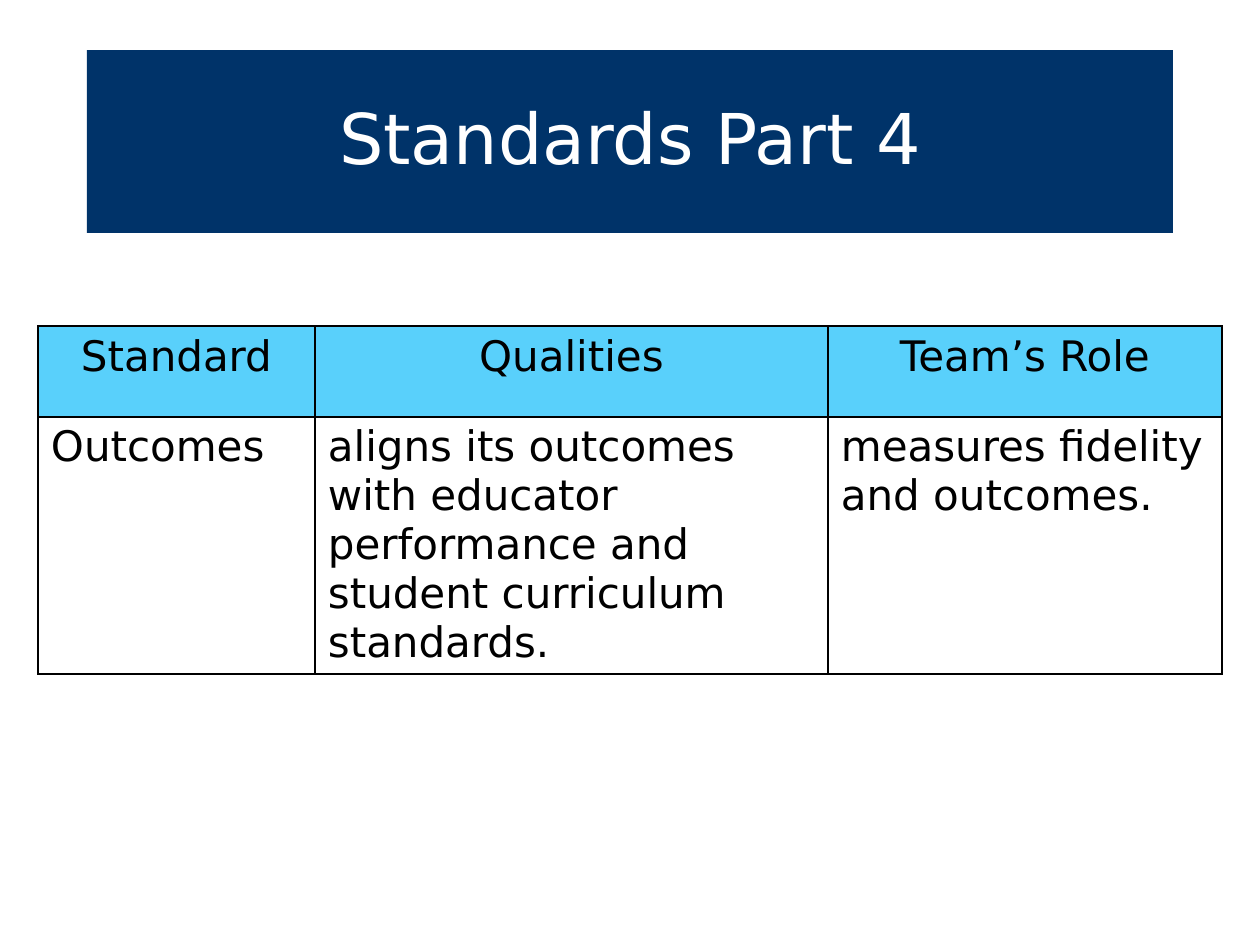
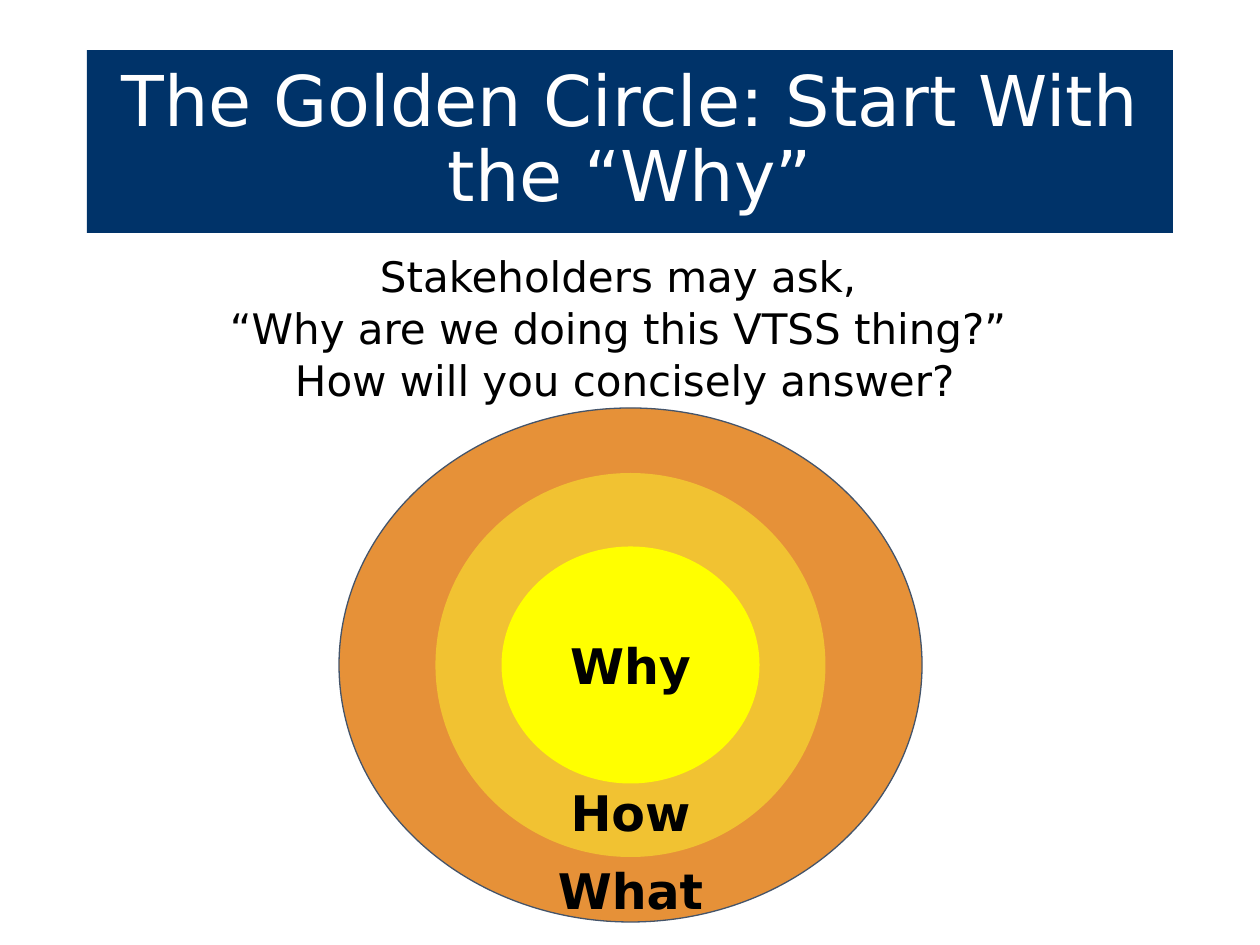
from collections import namedtuple
from dataclasses import dataclass

from lxml import etree
from pptx import Presentation
from pptx.dml.color import RGBColor
from pptx.enum.shapes import MSO_SHAPE
from pptx.enum.text import MSO_ANCHOR, PP_ALIGN
from pptx.oxml.ns import qn
from pptx.util import Pt

RECTANGLE, OVAL = MSO_SHAPE.RECTANGLE, MSO_SHAPE.OVAL
TOP, MIDDLE = MSO_ANCHOR.TOP, MSO_ANCHOR.MIDDLE
LEFT, CENTER = PP_ALIGN.LEFT, PP_ALIGN.CENTER
EMU_PER_PX = 914400 / 126
BLANK_LAYOUT = 6
Box = namedtuple("Box", "left top width height")


@dataclass(frozen=True)
class Theme:
    """Colours, font and type sizes shared by the slides."""
    font: str = "DejaVu Sans"
    black: str = "000000"
    white: str = "FFFFFF"
    navy: str = "003369"
    sky: str = "59D0FB"
    orange: str = "E69138"
    gold: str = "F1C232"
    yellow: str = "FFFF00"
    slate: str = "44546A"
    title_size: int = 40
    label_size: int = 28
    body_size: int = 24
    outline: float = 0.75
    border: float = 1


THEME = Theme()
SLIDE = Box(0, 0, 1260, 945)
TITLE = Box(87, 50, 1086, 183)
TABLE = Box(38, 326, 1184, 348)
QUESTION = Box(77, 237, 1096, 158)
CIRCLE = Box(339, 408, 583, 514)
INSET, SMALL_INSET = 13, 6
COLUMN_WIDTHS = (277, 513, 394)
ROW_HEIGHTS = (91, 257)
LABEL_WIDTH, LABEL_HEIGHT = 174, 89

STANDARDS = (
    ("Standard", "Qualities", "Team’s Role"),
    ("Outcomes",
     "aligns its outcomes with educator performance and student curriculum standards.",
     "measures fidelity and outcomes."),
)
QUESTION_LINES = (
    "Stakeholders may ask, ",
    "“Why are we doing this VTSS thing?” ",
    "How will you concisely answer?",
)
RINGS = (
    (583, 514, THEME.orange, THEME.slate),
    (390, 384, THEME.gold, None),
    (258, 237, THEME.yellow, None),
)
RING_LABELS = (("Why", 0), ("How", 147), ("What", 225))


def px(length):
    """Turn a length in px into EMU."""
    return round(length * EMU_PER_PX)


def place(box):
    """Turn a box in px into four EMU lengths."""
    return [px(length) for length in box]


def centered_box(outer, width, height, drop=0):
    """Return a box on the centre of another, moved down by drop."""
    return Box(outer.left + (outer.width - width) / 2,
               outer.top + (outer.height - height) / 2 + drop, width, height)


def style_paragraph(paragraph, size, color, align=CENTER, bold=False):
    """Set the font and alignment of a paragraph."""
    paragraph.alignment = align
    font = paragraph.font
    font.name, font.size, font.bold = THEME.font, Pt(size), bold
    font.color.rgb = RGBColor.from_string(color)


def set_frame(frame, anchor, vertical_inset=INSET):
    """Set the wrapping, anchor and insets of a text frame."""
    frame.word_wrap = True
    frame.vertical_anchor = anchor
    frame.margin_left = frame.margin_right = px(INSET)
    frame.margin_top = frame.margin_bottom = px(vertical_inset)


def add_filled_shape(slide, kind, box, fill, outline=None):
    """Add a flat preset shape with an optional outline."""
    shape = slide.shapes.add_shape(kind, *place(box))
    shape.shadow.inherit = False
    shape.fill.solid()
    shape.fill.fore_color.rgb = RGBColor.from_string(fill)
    if outline:
        shape.line.color.rgb = RGBColor.from_string(outline)
        shape.line.width = Pt(THEME.outline)
    else:
        shape.line.fill.background()
    return shape


def add_text(slide, box, lines, size, anchor, bold=False, space_before=0):
    """Add a text box with one centred paragraph for each line."""
    frame = slide.shapes.add_textbox(*place(box)).text_frame
    set_frame(frame, anchor)
    for index, line in enumerate(lines):
        paragraph = frame.add_paragraph() if index else frame.paragraphs[0]
        paragraph.text = line
        style_paragraph(paragraph, size, THEME.black, bold=bold)
        if index:
            paragraph.space_before = Pt(space_before)


def add_title_band(slide, box, title):
    """Add the navy band with the slide title."""
    frame = add_filled_shape(slide, RECTANGLE, box, THEME.navy).text_frame
    set_frame(frame, MIDDLE, SMALL_INSET)
    paragraph = frame.paragraphs[0]
    paragraph.text = title
    paragraph.line_spacing = 0.9
    style_paragraph(paragraph, THEME.title_size, THEME.white)


def add_cell_borders(cell):
    """Draw the four borders of a table cell ahead of its fill."""
    properties = cell._tc.get_or_add_tcPr()
    for index, side in enumerate(("lnL", "lnR", "lnT", "lnB")):
        line = etree.Element(qn(f"a:{side}"), w=str(Pt(THEME.border)))
        fill = etree.SubElement(line, qn("a:solidFill"))
        etree.SubElement(fill, qn("a:srgbClr"), val=THEME.black)
        properties.insert(index, line)


def add_standards_table(slide, box, rows):
    """Add the table with a header row and bordered cells."""
    table = slide.shapes.add_table(len(rows), len(COLUMN_WIDTHS), *place(box)).table
    for column, width in zip(table.columns, COLUMN_WIDTHS):
        column.width = px(width)
    for row_index, (row, height) in enumerate(zip(rows, ROW_HEIGHTS)):
        table.rows[row_index].height = px(height)
        is_header = row_index == 0
        for column_index, text in enumerate(row):
            cell = table.cell(row_index, column_index)
            cell.text = text
            cell.vertical_anchor = TOP
            cell.margin_left = cell.margin_right = px(INSET)
            cell.margin_top = cell.margin_bottom = px(SMALL_INSET)
            cell.fill.solid()
            cell.fill.fore_color.rgb = RGBColor.from_string(
                THEME.sky if is_header else THEME.white)
            add_cell_borders(cell)
            style_paragraph(cell.text_frame.paragraphs[0], THEME.body_size,
                            THEME.black, CENTER if is_header else LEFT)


def add_golden_circle(slide, box):
    """Add the concentric rings and their labels."""
    for width, height, fill, outline in RINGS:
        add_filled_shape(slide, OVAL, centered_box(box, width, height), fill, outline)
    for label, drop in RING_LABELS:
        label_box = centered_box(box, LABEL_WIDTH, LABEL_HEIGHT, drop)
        add_text(slide, label_box, [label], THEME.label_size, MIDDLE, bold=True)


def add_slide(presentation, title):
    """Add a blank slide with its title band."""
    slide = presentation.slides.add_slide(presentation.slide_layouts[BLANK_LAYOUT])
    add_title_band(slide, TITLE, title)
    return slide


def main():
    """Build and save both slides."""
    presentation = Presentation()
    presentation.slide_width = px(SLIDE.width)
    presentation.slide_height = px(SLIDE.height)

    standards_slide = add_slide(presentation, "Standards Part 4")
    add_standards_table(standards_slide, TABLE, STANDARDS)

    circle_slide = add_slide(presentation, "The Golden Circle: Start With the “Why”")
    add_golden_circle(circle_slide, CIRCLE)
    add_text(circle_slide, QUESTION, QUESTION_LINES, THEME.body_size, TOP, space_before=1)

    presentation.save("out.pptx")


if __name__ == "__main__":
    main()
